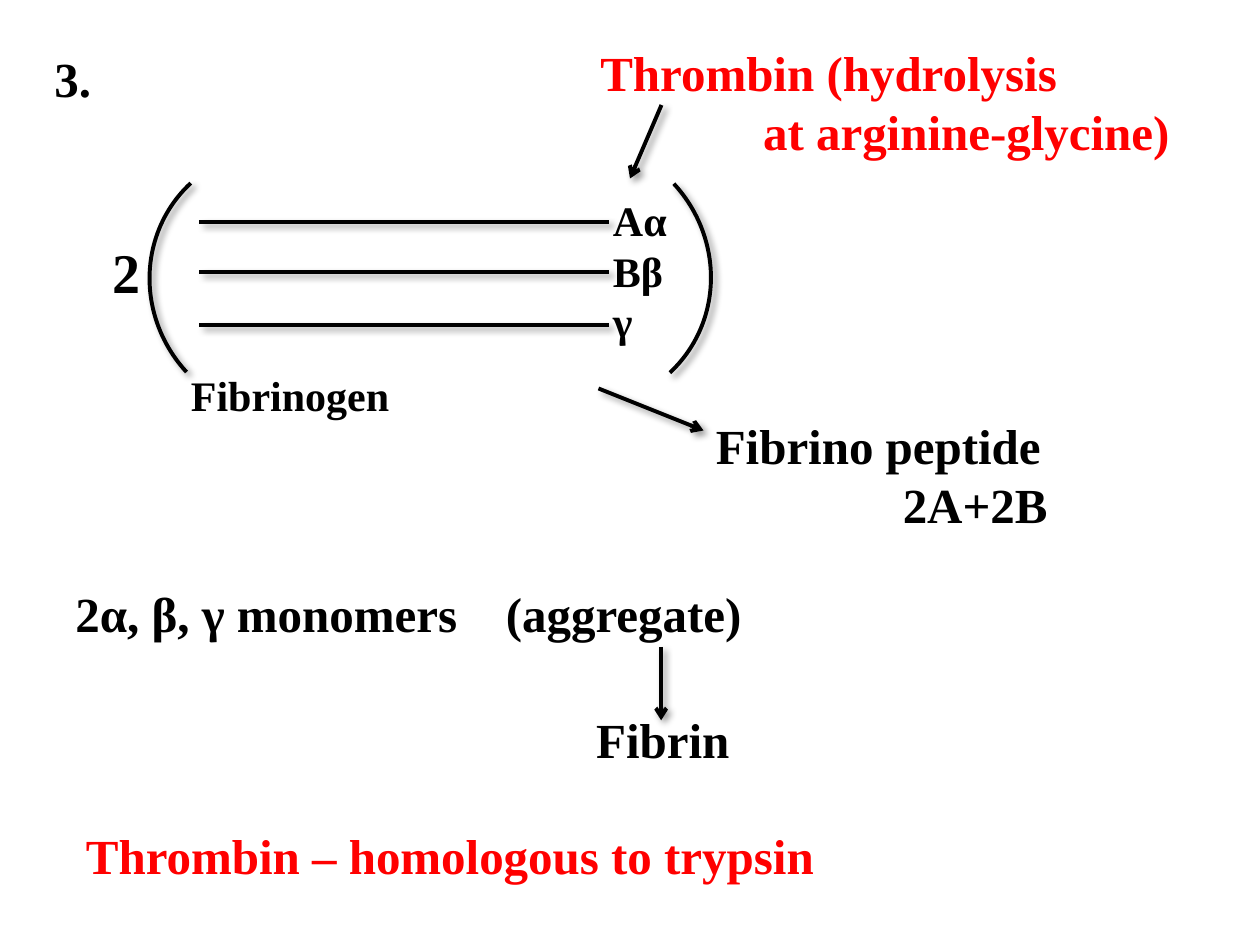
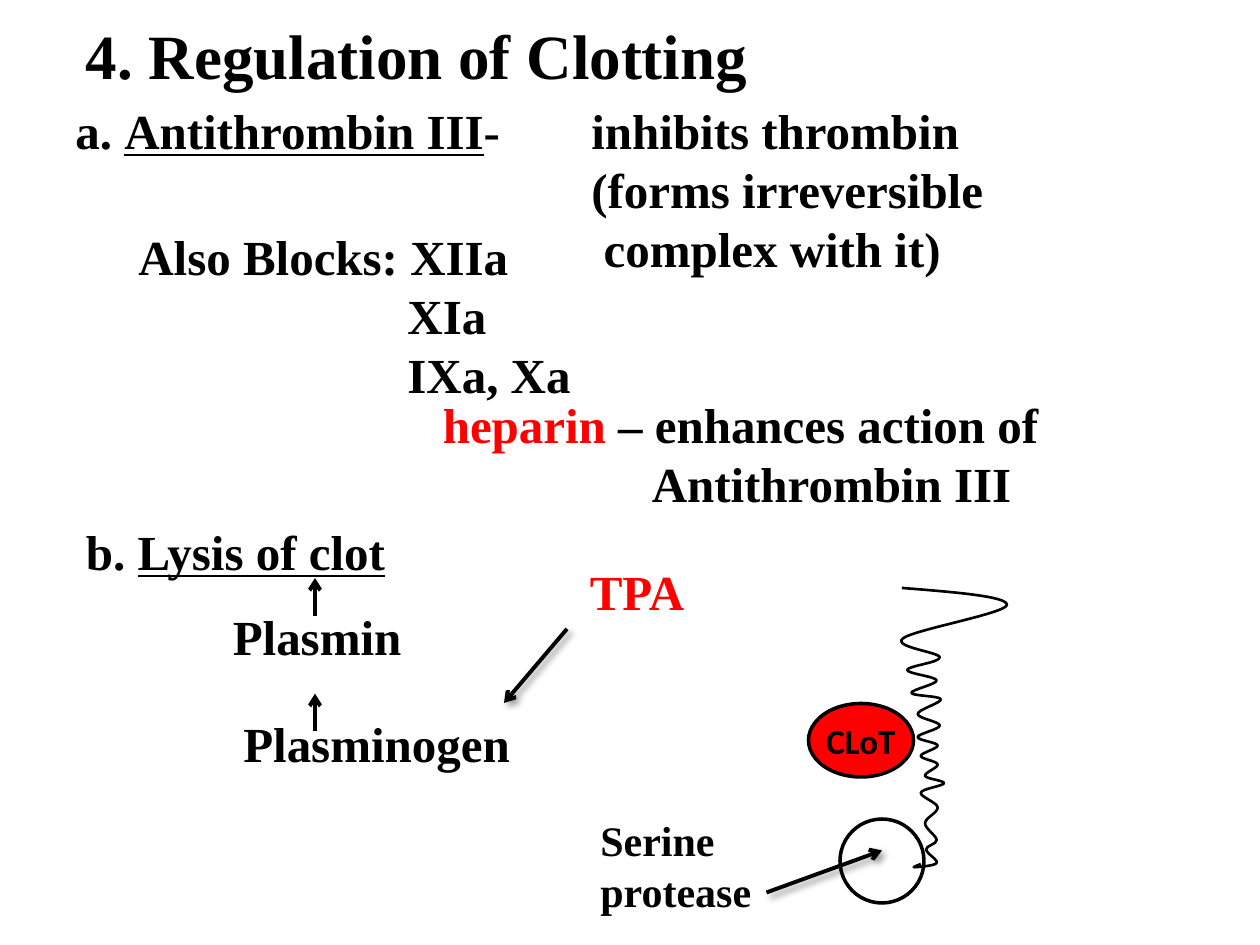
from dataclasses import dataclass
from typing import NamedTuple

from lxml import etree
from pptx import Presentation
from pptx.dml.color import RGBColor
from pptx.enum.shapes import MSO_CONNECTOR, MSO_SHAPE
from pptx.enum.text import MSO_ANCHOR, MSO_AUTO_SIZE, PP_ALIGN
from pptx.oxml.ns import qn
from pptx.util import Inches, Pt

STRAIGHT = MSO_CONNECTOR.STRAIGHT
ARC, ELLIPSE = MSO_SHAPE.ARC, MSO_SHAPE.OVAL
MIDDLE, CENTER = MSO_ANCHOR.MIDDLE, PP_ALIGN.CENTER
NO_AUTOSIZE, FIT_SHAPE = MSO_AUTO_SIZE.NONE, MSO_AUTO_SIZE.SHAPE_TO_FIT_TEXT

COLORS = {"ink": "000000", "accent": "FF0000"}
SERIF, SANS = "Times New Roman", "Calibri"
WIDTH, HEIGHT = Inches(10), Inches(7.5)
COLUMNS, ROWS = 120, 90
LINE_SPACING = 1.2


def col(n: float) -> int:
    return round(WIDTH * n / COLUMNS)


def row(n: float) -> int:
    return round(HEIGHT * n / ROWS)


class Run(NamedTuple):
    text: str
    color: str = "ink"
    underline: bool = False


class Point(NamedTuple):
    x: float
    y: float


@dataclass
class Label:
    x: float
    y: float
    cols: float
    lines: list[list[Run]]
    size: int = 28
    tabs: tuple[float, ...] = ()


@dataclass
class Stroke:
    start: Point
    end: Point
    arrow: bool = True
    shadow: bool = True


@dataclass
class Outline:
    kind: MSO_SHAPE
    x: float
    y: float
    cols: float
    rows: float
    weight: float = 2
    rotation: float = 0
    fill: str = ""
    shadow: bool = False


def plain(*texts: str, color: str = "ink") -> list[list[Run]]:
    return [[Run(text, color)] for text in texts]


def rgb(name: str) -> RGBColor:
    return RGBColor.from_string(COLORS[name])


def set_outline(shape, weight: float, shadow: bool = False) -> None:
    shape.line.color.rgb = rgb("ink")
    shape.line.width = Pt(weight)
    effects = etree.SubElement(shape._element.spPr, qn("a:effectLst"))
    if shadow:
        cast = etree.SubElement(effects, qn("a:outerShdw"), blurRad=str(Pt(4)),
                                dist=str(Pt(3)), dir="2700000", rotWithShape="0")
        ink = etree.SubElement(cast, qn("a:srgbClr"), val=COLORS["ink"])
        etree.SubElement(ink, qn("a:alpha"), val="40000")


def add_run(p, run: Run, size: int, font: str = SERIF) -> None:
    r = p.add_run()
    r.text = run.text
    r.font.name, r.font.size, r.font.bold = font, Pt(size), True
    r.font.color.rgb = rgb(run.color)
    if run.underline:
        r.font.underline = True


def add_label(s, label: Label) -> None:
    text_height = len(label.lines) * Pt(label.size) * LINE_SPACING
    tb = s.shapes.add_textbox(col(label.x), row(label.y), col(label.cols),
                              round(Inches(0.1) + text_height))
    tf = tb.text_frame
    tf.word_wrap = False
    tf.auto_size = FIT_SHAPE
    for i, line in enumerate(label.lines):
        p = tf.add_paragraph() if i else tf.paragraphs[0]
        if label.tabs:
            stops = etree.SubElement(p._p.get_or_add_pPr(), qn("a:tabLst"))
            for tab in label.tabs:
                etree.SubElement(stops, qn("a:tab"), pos=str(col(tab)), algn="l")
        for run in line:
            add_run(p, run, label.size)


def add_stroke(s, stroke: Stroke) -> None:
    a, b = stroke.start, stroke.end
    line = s.shapes.add_connector(STRAIGHT, col(a.x), row(a.y), col(b.x), row(b.y))
    set_outline(line, 2.25, stroke.shadow)
    if stroke.arrow:
        etree.SubElement(line.get_or_add_ln(), qn("a:tailEnd"), type="arrow")


def add_outline(s, outline: Outline):
    sp = s.shapes.add_shape(outline.kind, col(outline.x), row(outline.y),
                            col(outline.cols), row(outline.rows))
    sp.rotation = outline.rotation
    if outline.fill:
        sp.fill.solid()
        sp.fill.fore_color.rgb = rgb(outline.fill)
    else:
        sp.fill.background()
    set_outline(sp, outline.weight, outline.shadow)
    return sp


def add_caption(sp, run: Run, size: int) -> None:
    tf = sp.text_frame
    tf.margin_left = tf.margin_right = tf.margin_top = tf.margin_bottom = 0
    tf.vertical_anchor = MIDDLE
    tf.word_wrap = True
    tf.auto_size = NO_AUTOSIZE
    tf.paragraphs[0].alignment = CENTER
    add_run(tf.paragraphs[0], run, size, SANS)


def midpoint(a: Point, b: Point) -> Point:
    return Point((a.x + b.x) / 2, (a.y + b.y) / 2)


def with_handles(knots: list[Point]) -> list[Point]:
    points = []
    for prior, knot, following in zip(knots, knots[1:], knots[2:]):
        dx, dy = (following.x - prior.x) / 6, (following.y - prior.y) / 6
        points += [Point(knot.x - dx, knot.y - dy), knot, Point(knot.x + dx, knot.y + dy)]
    first, last = knots[0], knots[-1]
    return [first, midpoint(first, points[0]), *points, midpoint(points[-1], last), last]


def add_curve(s, knots: list[Point]) -> None:
    start, *rest = [(col(p.x), row(p.y)) for p in with_handles(knots)]
    builder = s.shapes.build_freeform(*start)
    builder.add_line_segments(rest, close=False)
    sp = builder.convert_to_shape()
    segments = list(sp._element.iter(qn("a:lnTo")))
    for handle_out, handle_in, end in zip(segments[::3], segments[1::3], segments[2::3]):
        bezier = etree.Element(qn("a:cubicBezTo"))
        handle_out.addprevious(bezier)
        for segment in (handle_out, handle_in, end):
            bezier.append(segment[0])
            segment.getparent().remove(segment)
    sp.fill.background()
    set_outline(sp, 1.5)


FIBRIN_LABELS = [
    Label(56, 3.5, 57.2, plain("Thrombin (hydrolysis", "\tat arginine-glycine)",
                               color="accent"), tabs=(15.5,)),
    Label(57.2, 17.95, 7.6, plain("Aα", "Bβ", "γ"), 24),
    Label(17, 34.6, 21.5, plain("Fibrinogen"), 24),
    Label(9.55, 22, 5.2, plain("2"), 32),
    Label(67, 39, 34.3, plain("Fibrino peptide", "\t2A+2B"), tabs=(17.8,)),
    Label(6, 55, 66.6, plain("2α, β, γ monomers\t(aggregate)"), tabs=(41,)),
    Label(55.6, 67, 15.2, plain("Fibrin")),
    Label(7, 78, 72.6, plain("Thrombin – homologous to trypsin", color="accent")),
    Label(4, 4, 6, plain("3.")),
]
FIBRIN_ARROWS = [
    Stroke(Point(63, 10), Point(60, 17)),
    Stroke(Point(57, 37), Point(67, 41)),
    Stroke(Point(62.97, 61.6), Point(62.97, 68.6)),
]
CHAINS = [Stroke(Point(19, y), Point(58, y), arrow=False) for y in (21.1, 25.9, 30.95)]
BRACKETS = [Outline(ARC, x, y, 25.9, 25, 2.25, angle, shadow=True)
            for x, y, angle in ((14, 14.45, 227.3), (42.05, 13.5, 47.2))]

CLOTTING_LABELS = [
    Label(7, 1, 66, plain("4. Regulation of Clotting"), 36),
    Label(6, 9, 89.8, [
        [Run("a. "), Run("Antithrombin III", underline=True), Run("-\tinhibits thrombin")],
        *plain("\t(forms irreversible", "\t complex with it)")], tabs=(49.15,)),
    Label(12, 21, 44, plain("Also Blocks: XIIa", "\tXIa", "\tIXa, Xa"), tabs=(25.62,)),
    Label(29, 37, 73.4, [[Run("\theparin ", "accent"), Run("– enhances action of")],
                         *plain("\t\tAntithrombin III")], tabs=(12, 31.9)),
    Label(56, 77, 16.9, plain("Serine", "protease"), 24),
    Label(7, 49.1, 31.2, [[Run("b. "), Run("Lysis of clot", underline=True)]]),
    Label(21, 57.17, 18.7, plain("Plasmin")),
    Label(22, 67.37, 28.1, plain("Plasminogen")),
    Label(55, 52.9, 11.5, plain("TPA", color="accent")),
]
CLOTTING_ARROWS = [
    Stroke(Point(73, 85), Point(84, 81)),
    Stroke(Point(54, 59.9), Point(48, 66.95)),
    *[Stroke(Point(30, y), Point(30, y - 3.6), shadow=False) for y in (58.65, 69.67)],
]
PROTEASE = Outline(ELLIPSE, 80, 78, 8, 8)
CLOT = Outline(ELLIPSE, 77, 67, 10, 7, fill="accent")
PROTEIN_KNOTS = [Point(*xy) for xy in (
    (85.9, 56), (95.9, 57.6), (86, 60.8), (89.5, 62.6), (86.4, 63.8), (89.2, 64.8),
    (86.8, 66), (89.6, 66.6), (87.4, 68), (89.5, 69.1), (87.4, 70.2), (89.3, 71),
    (87.7, 72), (89.3, 72.8), (88.1, 73.9), (89.9, 74.6), (87.7, 75.5), (89.3, 76.9),
    (88.1, 78.4), (89.2, 80), (88.2, 80.9), (89.2, 82.2), (87.1, 82.6), (87.7, 82.3))]


def add_slide(prs, labels: list[Label], strokes: list[Stroke]):
    s = prs.slides.add_slide(prs.slide_layouts[6])
    for label in labels:
        add_label(s, label)
    for stroke in strokes:
        add_stroke(s, stroke)
    return s


def main() -> None:
    prs = Presentation()
    prs.slide_width, prs.slide_height = WIDTH, HEIGHT

    fibrin = add_slide(prs, FIBRIN_LABELS, CHAINS + FIBRIN_ARROWS)
    for bracket in BRACKETS:
        add_outline(fibrin, bracket)

    clotting = add_slide(prs, CLOTTING_LABELS, CLOTTING_ARROWS)
    add_outline(clotting, PROTEASE)
    add_caption(add_outline(clotting, CLOT), Run("CLoT"), 20)
    add_curve(clotting, PROTEIN_KNOTS)

    prs.save("out.pptx")


if __name__ == "__main__":
    main()
